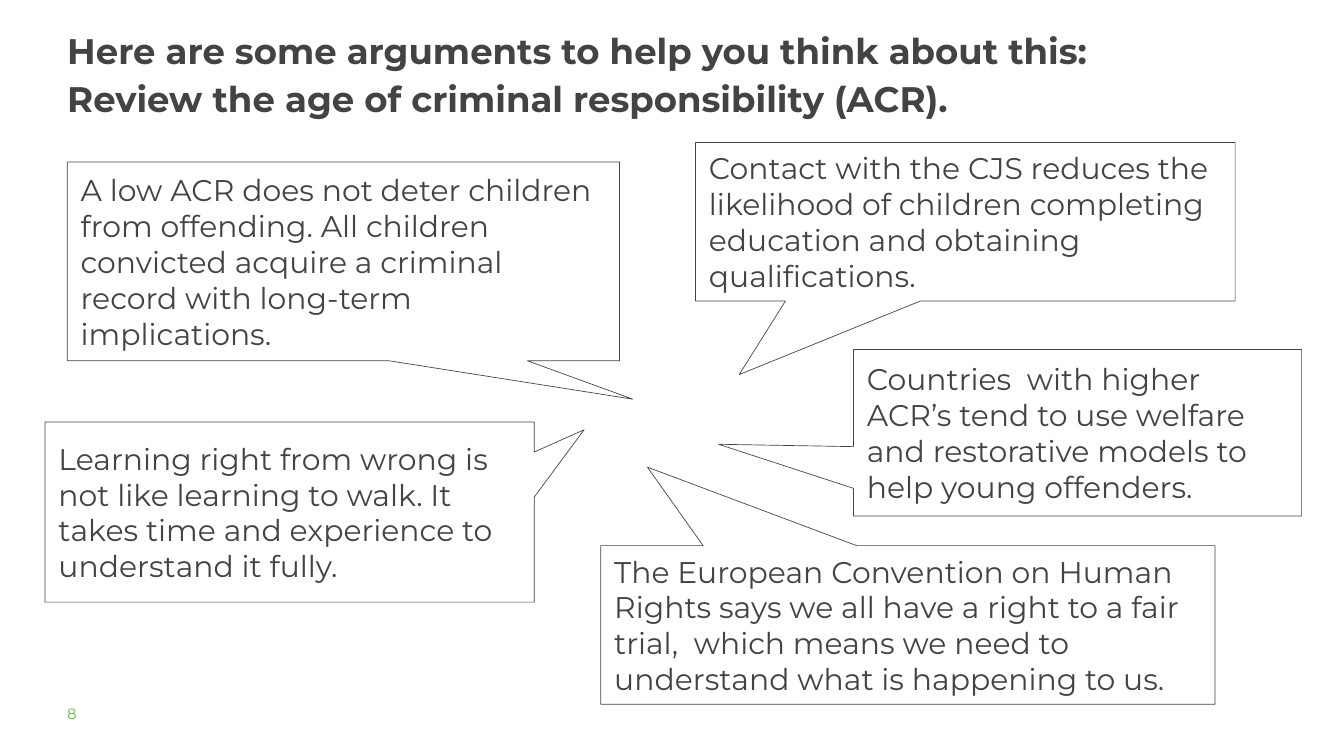
from pptx import Presentation
from pptx.dml.color import RGBColor
from pptx.enum import shapes, text
from pptx.util import Inches, Pt

FONT = "Montserrat"
DARK_GREY = RGBColor(0x43, 0x43, 0x43)
GREEN = RGBColor(0x65, 0xBE, 0x4B)


def prepare_frame(frame, margin, anchor):
    frame.word_wrap = True
    frame.auto_size = text.MSO_AUTO_SIZE.NONE
    frame.vertical_anchor = anchor
    frame.margin_left = frame.margin_right = Inches(margin)
    frame.margin_top = frame.margin_bottom = Inches(margin)


def format_paragraph(paragraph, size, color, bold=False):
    paragraph.alignment = text.PP_ALIGN.LEFT
    paragraph.font.name = FONT
    paragraph.font.size = Pt(size)
    paragraph.font.bold = bold
    paragraph.font.color.rgb = color


presentation = Presentation()
presentation.slide_width = Inches(20)
presentation.slide_height = Inches(11.25)
slide = presentation.slides.add_slide(presentation.slide_layouts[5])

# Title
title = slide.shapes.title
title.left, title.top = Inches(1), Inches(0.33)
title.width, title.height = Inches(17.99), Inches(1.78)
prepare_frame(title.text_frame, 0, text.MSO_ANCHOR.TOP)
title.text_frame.text = (
    "Here are some arguments to help you think about this:\n"
    "Review the age of criminal responsibility (ACR)."
)
for paragraph in title.text_frame.paragraphs:
    format_paragraph(paragraph, 38, DARK_GREY, bold=True)
    paragraph.line_spacing = 1.15

# Argument callouts: left, top, width, height, pointer offsets, wording
arguments = [
    (0.67, 6.28, 7.28, 2.68, 0.602, -0.457,
     "Learning right from wrong is not like learning to walk. It takes time "
     "and experience to understand it fully."),
    (1, 2.41, 8.22, 2.96, 0.524, 0.693,
     "A low ACR does not deter children from offending. All children "
     "convicted acquire a criminal record with long-term implications."),
    (8.94, 8.12, 9.14, 2.36, -0.424, -0.995,
     "The European Convention on Human Rights says we all have a right to a "
     "fair trial,  which means we need to understand what is happening to us."),
    (10.35, 2.12, 8.03, 2.36, -0.419, 0.964,
     "Contact with the CJS reduces the likelihood of children completing "
     "education and obtaining qualifications."),
    (12.7, 5.2, 6.67, 2.48, -0.801, 0.069,
     "Countries  with higher ACR’s tend to use welfare and restorative "
     "models to help young offenders."),
]
for left, top, width, height, pointer_x, pointer_y, argument in arguments:
    callout = slide.shapes.add_shape(
        shapes.MSO_SHAPE.RECTANGULAR_CALLOUT,
        Inches(left), Inches(top), Inches(width), Inches(height))
    callout.adjustments[0] = pointer_x
    callout.adjustments[1] = pointer_y
    callout.shadow.inherit = False
    callout.fill.background()
    callout.line.color.rgb = DARK_GREY
    callout.line.width = Pt(0.75)
    prepare_frame(callout.text_frame, 0.2, text.MSO_ANCHOR.MIDDLE)
    callout.text_frame.text = argument
    format_paragraph(callout.text_frame.paragraphs[0], 32, DARK_GREY)

# Slide number
number = slide.shapes.add_textbox(
    Inches(1), Inches(10.48), Inches(1.57), Inches(0.39))
prepare_frame(number.text_frame, 0, text.MSO_ANCHOR.TOP)
number.text_frame.text = "8"
format_paragraph(number.text_frame.paragraphs[0], 16, GREEN)

presentation.save("out.pptx")
